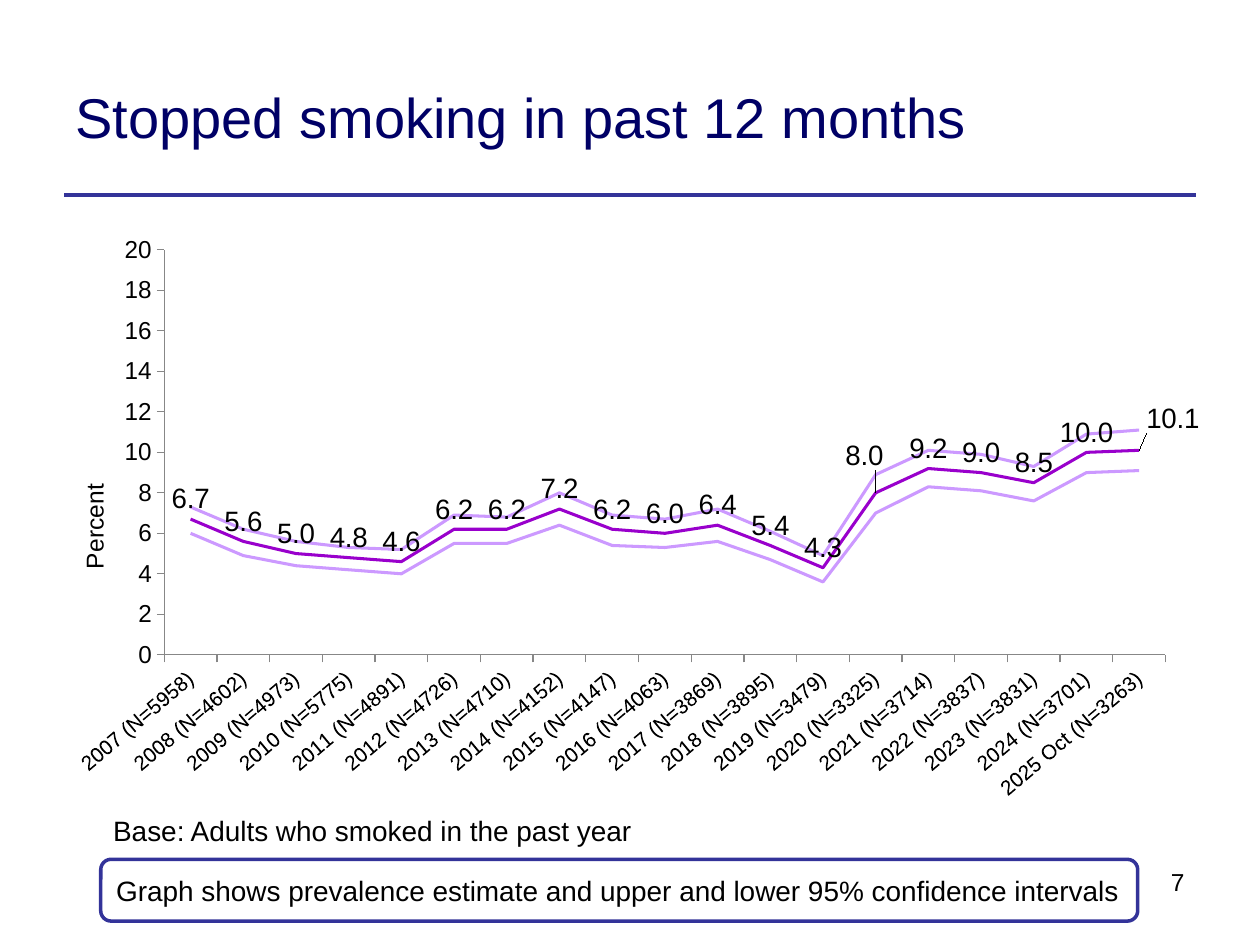
"""Build the slide on stopping smoking in the past 12 months."""
from dataclasses import dataclass

from lxml.etree import Element, SubElement
from pptx import Presentation
from pptx.chart.data import CategoryChartData
from pptx.dml.color import RGBColor
from pptx.enum.chart import XL_CHART_TYPE, XL_LABEL_POSITION, XL_MARKER_STYLE, XL_TICK_MARK
from pptx.enum.shapes import MSO_CONNECTOR, MSO_SHAPE
from pptx.enum.text import MSO_ANCHOR, PP_ALIGN
from pptx.oxml.ns import qn
from pptx.util import Inches, Pt


@dataclass(frozen=True)
class Theme:
    font: str = "Arial"
    ink: str = "000000"
    paper: str = "FFFFFF"
    title: str = "000066"
    rule: str = "333399"
    axis: str = "878787"
    mid: str = "9900CC"
    band: str = "CC99FF"
    head_size: int = 32
    text_size: int = 16
    axis_size: int = 14
    year_size: int = 12


THEME = Theme()
FORMAT = "#,##0.0"
BASES = [5958, 4602, 4973, 5775, 4891, 4726, 4710, 4152, 4147, 4063,
         3869, 3895, 3479, 3325, 3714, 3837, 3831, 3701, 3263]
SERIES = [
    ("Series 1", THEME.mid, [6.7, 5.6, 5, 4.8, 4.6, 6.2, 6.2, 7.2, 6.2, 6,
                             6.4, 5.4, 4.3, 8, 9.2, 9, 8.5, 10, 10.1]),
    ("Series 2", THEME.band, [6, 4.9, 4.4, 4.2, 4, 5.5, 5.5, 6.4, 5.4, 5.3,
                              5.6, 4.7, 3.6, 7, 8.3, 8.1, 7.6, 9, 9.1]),
    ("Series 3", THEME.band, [7.3, 6.2, 5.6, 5.3, 5.2, 6.9, 6.8, 8, 6.9, 6.7,
                              7.2, 6.1, 4.9, 8.9, 10.1, 9.9, 9.3, 10.9, 11.1]),
]
SHIFTS = {13: (-0.01, -0.03), 18: (0.03, -0.02)}


def set_font(font, size, color=THEME.ink):
    font.name, font.size, font.bold = THEME.font, Pt(size), False
    font.color.rgb = RGBColor.from_string(color)


def set_line(line, color, width):
    line.color.rgb = RGBColor.from_string(color)
    line.width = Pt(width)


def write(shape, text, size, color=THEME.ink, align=PP_ALIGN.LEFT,
          anchor=MSO_ANCHOR.TOP, wrap=True):
    frame = shape.text_frame
    frame.word_wrap, frame.vertical_anchor = wrap, anchor
    para = frame.paragraphs[0]
    para.text, para.alignment = text, align
    set_font(para.font, size, color)


def add_text(slide, box, text, size, **style):
    write(slide.shapes.add_textbox(*map(Inches, box)), text, size, **style)


def add_rule(slide, left, right, top):
    ends = map(Inches, (left, top, right, top))
    rule = slide.shapes.add_connector(MSO_CONNECTOR.STRAIGHT, *ends)
    set_line(rule.line, THEME.rule, 2.25)
    SubElement(rule._element.spPr, qn("a:effectLst"))


def add_note(slide, box, text):
    note = slide.shapes.add_shape(MSO_SHAPE.ROUNDED_RECTANGLE, *map(Inches, box))
    note.shadow.inherit = False
    note.fill.solid()
    note.fill.fore_color.rgb = RGBColor.from_string(THEME.paper)
    set_line(note.line, THEME.rule, 2)
    write(note, text, THEME.text_size, anchor=MSO_ANCHOR.MIDDLE)


def place(node, index, **values):
    for old in node.findall(qn("c:layout")):
        node.remove(old)
    layout = Element(qn("c:layout"))
    node.insert(index, layout)
    manual = SubElement(layout, qn("c:manualLayout"))
    for name, value in values.items():
        SubElement(manual, qn(f"c:{name}")).set("val", str(value))


def turn(node, angle):
    for body in node.iter(qn("a:bodyPr")):
        body.set("rot", str(angle * 60000))
        body.set("vert", "horz")


def style_axis(axis, size):
    axis.has_major_gridlines = False
    axis.major_tick_mark = XL_TICK_MARK.OUTSIDE
    axis.minor_tick_mark = XL_TICK_MARK.NONE
    set_line(axis.format.line, THEME.axis, 0.75)
    set_font(axis.tick_labels.font, size)


def style_labels(series):
    labels = series.data_labels
    labels.show_value, labels.position = True, XL_LABEL_POSITION.ABOVE
    labels.number_format, labels.number_format_is_linked = FORMAT, False
    set_font(labels.font, THEME.text_size)
    for index in SHIFTS:
        label = series.points[index].data_label
        set_font(label.font, THEME.text_size)
        label.position = XL_LABEL_POSITION.ABOVE
    for node in series._element.iter(qn("c:dLbl")):
        x, y = SHIFTS[int(node.find(qn("c:idx")).get("val"))]
        place(node, 1, x=x, y=y)
        form = Element(qn("c:numFmt"), formatCode=FORMAT, sourceLinked="0")
        node.insert(2, form)


def add_graph(slide, box):
    data = CategoryChartData()
    data.categories = [f"{year}{' Oct' if year == 2025 else ''} (N={base})"
                       for year, base in enumerate(BASES, 2007)]
    for name, _, values in SERIES:
        data.add_series(name, values)
    frame = slide.shapes.add_chart(XL_CHART_TYPE.LINE, *map(Inches, box), data)
    chart = frame.chart
    chart.has_legend = chart.has_title = False
    set_font(chart.font, 18)
    plot = chart.plots[0]
    plot.vary_by_categories = False
    for series, (_, color, _) in zip(plot.series, SERIES):
        series.smooth = False
        series.marker.style = XL_MARKER_STYLE.NONE
        set_line(series.format.line, color, 1.75)
    style_labels(plot.series[0])
    years, scale = chart.category_axis, chart.value_axis
    style_axis(years, THEME.year_size)
    turn(years._element, -40)
    style_axis(scale, THEME.axis_size)
    scale.minimum_scale, scale.maximum_scale, scale.major_unit = 0, 20, 2
    title = scale.axis_title
    title.text_frame.text = "Percent"
    set_font(title.text_frame.paragraphs[0].font, THEME.axis_size)
    node = scale._element.find(qn("c:title"))
    turn(node, -90)
    place(node, 1, xMode="edge", yMode="edge", x=0.01, y=0.44)
    area = chart._chartSpace.chart.plotArea
    place(area, 0, layoutTarget="inner", xMode="edge", yMode="edge",
          x=0.09, y=0.05, w=0.89, h=0.69)


def main():
    deck = Presentation()
    deck.slide_width, deck.slide_height = Inches(10), Inches(7.5)
    slide = deck.slides.add_slide(deck.slide_layouts[6])
    add_rule(slide, 0.51, 9.49, 1.55)
    add_text(slide, (0.5, 0.3, 7.89, 1.25), "Stopped smoking in past 12 months",
             THEME.head_size, color=THEME.title, anchor=MSO_ANCHOR.MIDDLE)
    add_graph(slide, (0.5, 1.75, 9.02, 4.66))
    add_text(slide, (6.73, 6.83, 2.77, 0.52), "7", THEME.axis_size,
             align=PP_ALIGN.RIGHT)
    add_note(slide, (0.8, 6.82, 8.23, 0.49), "Graph shows prevalence estimate "
             "and upper and lower 95% confidence intervals")
    add_text(slide, (0.8, 6.41, 4.37, 0.37),
             "Base: Adults who smoked in the past year", THEME.text_size, wrap=False)
    deck.save("out.pptx")


if __name__ == "__main__":
    main()
